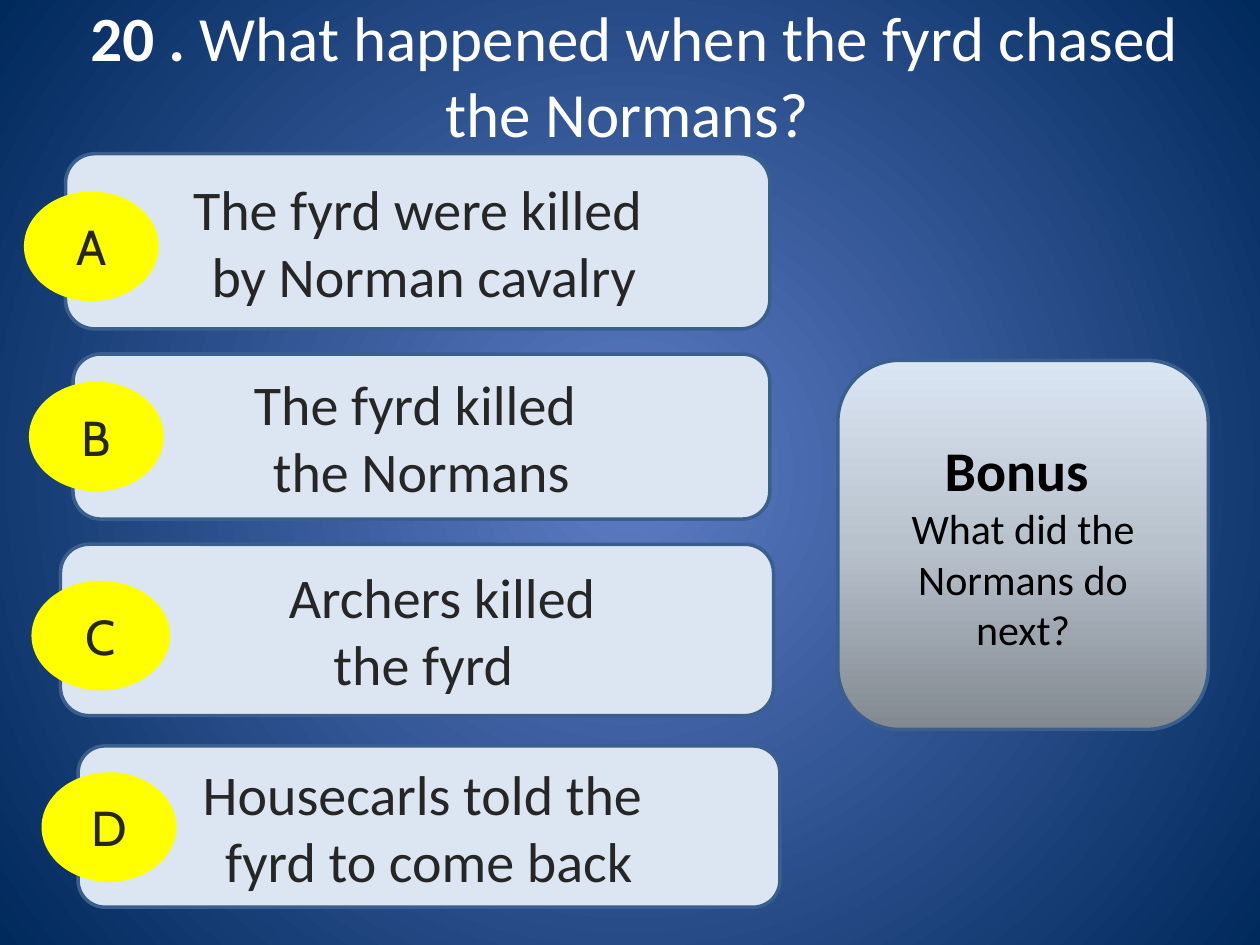
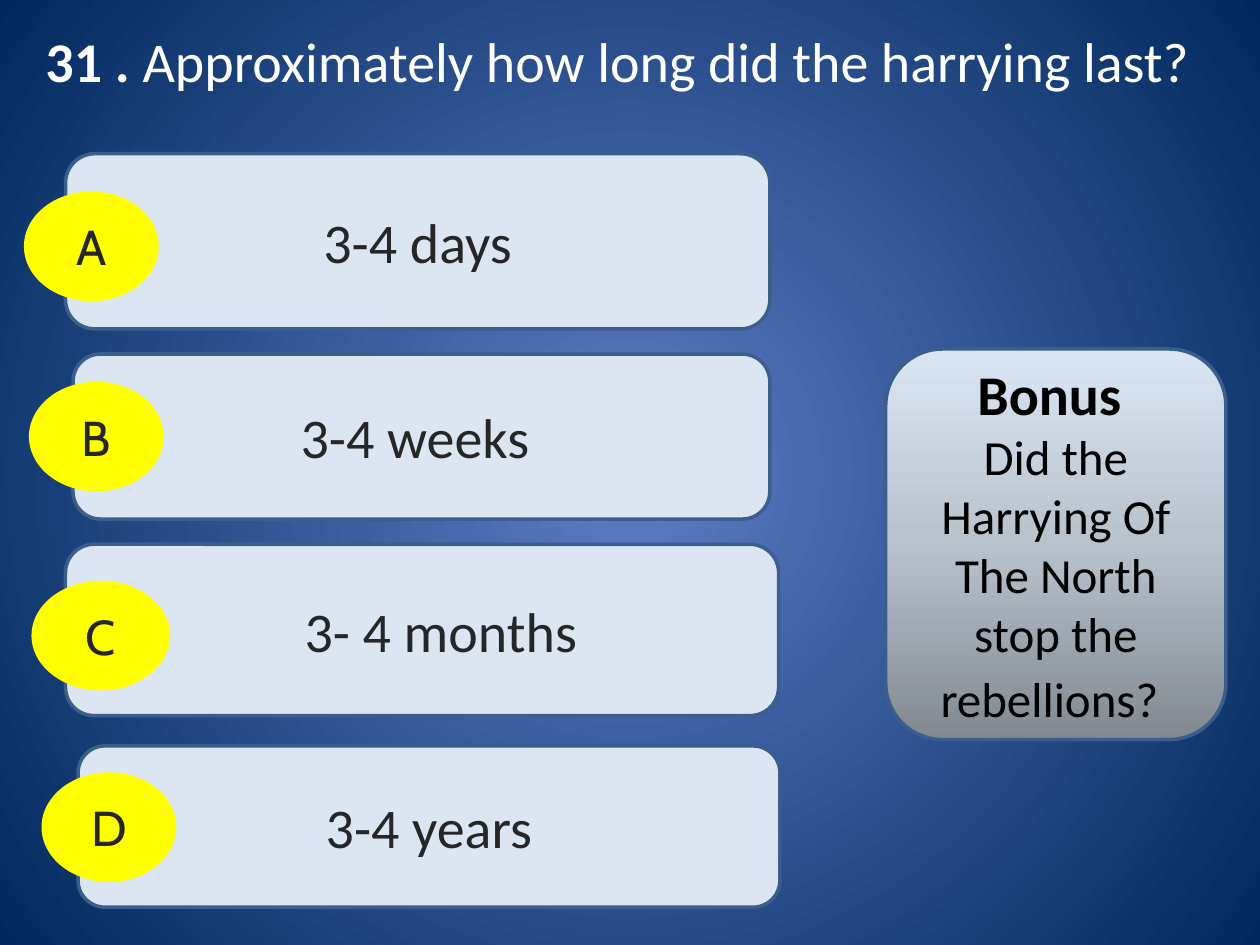
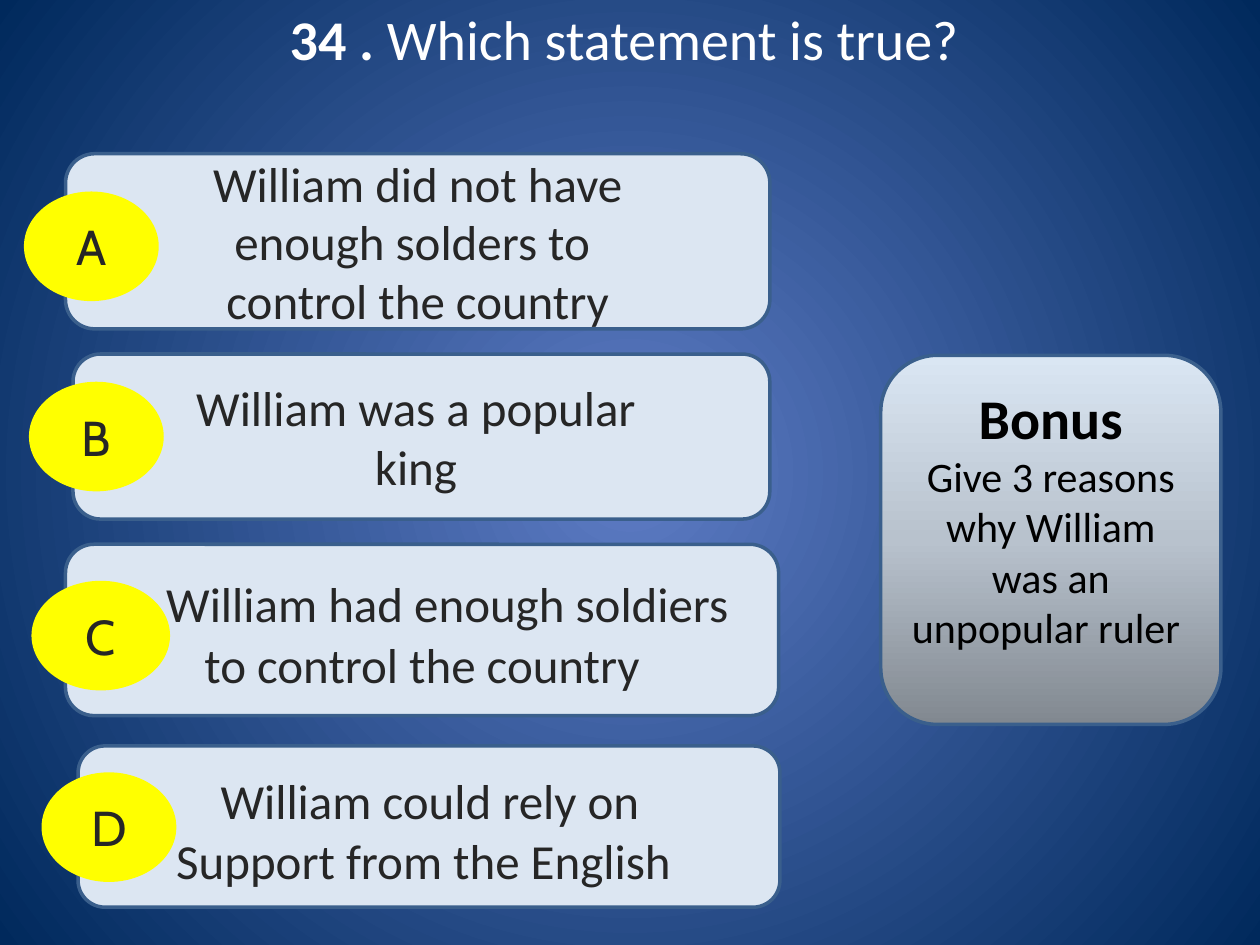
"""Build three quiz slides, each with four answers and a bonus question."""
from typing import Any, NamedTuple

from pptx import Presentation
from pptx.dml.color import RGBColor
from pptx.enum.shapes import MSO_SHAPE
from pptx.enum.text import MSO_ANCHOR, PP_ALIGN
from pptx.oxml import parse_xml
from pptx.oxml.ns import nsdecls, qn
from pptx.util import Inches, Pt

HUES = {
    "title": "FFFFFF", "text": "262626", "black": "000000",
    "bar": "DCE6F2", "edge": "3A5F8C", "disc": "FFFF00",
    "glow": "5E7CC5", "night": "00295C",
    "slate": "818890", "mist": "B8C2CD", "pale": "DAE6F3",
}
RADIAL = ('<a:path {} path="circle"><a:fillToRect l="50000" t="50000" '
          'r="50000" b="50000"/></a:path>')
UPWARD = '<a:lin {} ang="16200000" scaled="0"/>'


class Box(NamedTuple):
    left: float
    top: float
    width: float
    height: float


class Piece(NamedTuple):
    text: str
    size: int = 32
    bold: bool = False


class Answer(NamedTuple):
    words: list[Piece]
    indent: float = 0


class Slot(NamedTuple):
    letter: str
    bar: Box
    disc: Box


class Quiz(NamedTuple):
    title: Box
    heading: list[Piece]
    answers: list[Answer]
    bonus: Box
    extra: list[Piece]
    foot: float = 0.05
    nudge: float = 0


SLOTS = [
    Slot("A", Box(0.52, 1.22, 5.59, 1.39), Box(0.19, 1.52, 1.07, 0.87)),
    Slot("B", Box(0.58, 2.81, 5.53, 1.31), Box(0.23, 3.03, 1.07, 0.87)),
    Slot("C", Box(0.52, 4.32, 5.66, 1.36), Box(0.25, 4.61, 1.1, 0.87)),
    Slot("D", Box(0.62, 5.92, 5.57, 1.28), Box(0.33, 6.13, 1.07, 0.87)),
]

QUIZZES = [
    Quiz(
        Box(0.26, -0.06, 9.55, 1.78),
        [Piece("20 .", 36, True),
         Piece(" What happened when the fyrd chased\nthe Normans? ", 36)],
        [Answer([Piece("The fyrd were killed\n by Norman cavalry")]),
         Answer([Piece("The fyrd killed \nthe Normans")]),
         Answer([Piece("Archers killed\n the fyrd")], 0.4),
         Answer([Piece("Housecarls told the \nfyrd to come back")])],
        Box(6.65, 2.86, 2.94, 2.93),
        [Piece("Bonus \n", 32, True),
         Piece("What did the Normans do next?", 24)],
        nudge=-0.04,
    ),
    Quiz(
        Box(0.18, 0.16, 9.55, 1.11),
        [Piece("31 .", 32, True),
         Piece(" Approximately how long did the harrying last? ")],
        [Answer([Piece("3-4 days")]),
         Answer([Piece("3-4 weeks ")]),
         Answer([Piece("3- 4 months")], 0.3),
         Answer([Piece("3-4 years")])],
        Box(7.03, 2.77, 2.7, 3.1),
        [Piece("Bonus \n", 32, True),
         Piece("Did the Harrying Of The North stop the rebellions?", 28),
         Piece(" ", 32, True)],
    ),
    Quiz(
        Box(0.18, -0.01, 9.55, 1.11),
        [Piece("34 .", 32, True), Piece(" Which statement is true?")],
        [Answer([Piece("William did not have\nenough solders to \n"
                       "control the country", 28)]),
         Answer([Piece("William was a popular \nking ", 28)]),
         Answer([Piece(" "), Piece("William had enough soldiers\n"
                                   "to control the country", 28)], 0.3),
         Answer([Piece(" "), Piece("William could rely on \n"
                                   "Support from the English ", 28)])],
        Box(6.99, 2.82, 2.7, 2.93),
        [Piece("Bonus\n", 32, True),
         Piece("Give 3 reasons why William was an unpopular ruler ", 24)],
        foot=0.4,
    ),
]


def hue(name: str) -> RGBColor:
    """Look up a colour by name."""
    return RGBColor.from_string(HUES[name])


def place(box: Box) -> list[int]:
    """Turn a box into lengths."""
    return [Inches(side) for side in box]


def assign(target: Any, values: dict[str, Any]) -> None:
    """Set each named attribute on the target."""
    for name, value in values.items():
        setattr(target, name, value)


def blend(root: Any, names: list[str], shade: str) -> None:
    """Give the gradient under root evenly spaced colours and a shade."""
    grad = next(root.iter(qn("a:gradFill")))
    for child in list(grad):
        grad.remove(child)
    step = 100000 // (len(names) - 1)
    stops = "".join(
        f'<a:gs pos="{i * step}"><a:srgbClr val="{HUES[name]}"/></a:gs>'
        for i, name in enumerate(names))
    grad.append(parse_xml(f'<a:gsLst {nsdecls("a")}>{stops}</a:gsLst>'))
    grad.append(parse_xml(shade.format(nsdecls("a"))))


def write(shape: Any, words: list[Piece], color: str, face: str = "Calibri",
          indent: float = 0, anchor: Any = MSO_ANCHOR.MIDDLE,
          foot: float = 0.05) -> None:
    """Write centred text, with a line break at each newline."""
    frame = shape.text_frame
    assign(frame, {"word_wrap": True, "vertical_anchor": anchor,
                   "margin_bottom": Inches(foot)})
    para = frame.paragraphs[0]
    para.alignment = PP_ALIGN.CENTER
    if indent:
        para._p.get_or_add_pPr().set("indent", str(Inches(indent)))
    for piece in words:
        for row, text in enumerate(piece.text.split("\n")):
            if row:
                para.add_line_break()
            if text:
                run = para.add_run()
                run.text = text
                assign(run.font, {"name": face, "size": Pt(piece.size),
                                  "bold": piece.bold})
                run.font.color.rgb = hue(color)


def draw(slide: Any, kind: Any, box: Box, fill: str = "",
         edge: str = "") -> Any:
    """Add a flat shape with an optional fill and edge."""
    shape = slide.shapes.add_shape(kind, *place(box))
    shape.shadow.inherit = False
    if fill:
        shape.fill.solid()
        shape.fill.fore_color.rgb = hue(fill)
    if edge:
        shape.line.color.rgb = hue(edge)
        shape.line.width = Pt(2)
    else:
        shape.line.fill.background()
    return shape


def build(slide: Any, quiz: Quiz) -> None:
    """Draw one quiz question."""
    title = slide.shapes.add_textbox(*place(quiz.title))
    write(title, quiz.heading, "title", anchor=MSO_ANCHOR.TOP)
    for slot, answer in zip(SLOTS, quiz.answers):
        box = slot.bar
        if slot.letter == "C":
            box = box._replace(left=box.left + quiz.nudge)
        bar = draw(slide, MSO_SHAPE.ROUNDED_RECTANGLE, box, "bar", "edge")
        write(bar, answer.words, "text", indent=answer.indent)
        disc = draw(slide, MSO_SHAPE.OVAL, slot.disc, "disc")
        write(disc, [Piece(slot.letter, 28)], "text", "Cabin")
    bonus = draw(slide, MSO_SHAPE.ROUNDED_RECTANGLE, quiz.bonus, edge="edge")
    bonus.fill.gradient()
    blend(bonus._element, ["slate", "mist", "pale"], UPWARD)
    write(bonus, quiz.extra, "black", foot=quiz.foot)


def main() -> None:
    """Build and save the deck."""
    deck = Presentation()
    assign(deck, {"slide_width": Inches(10), "slide_height": Inches(7.5)})
    master = deck.slide_master
    master.background.fill.gradient()
    blend(master._element, ["glow", "night"], RADIAL)
    for quiz in QUIZZES:
        build(deck.slides.add_slide(deck.slide_layouts[6]), quiz)
    deck.save("out.pptx")


if __name__ == "__main__":
    main()
